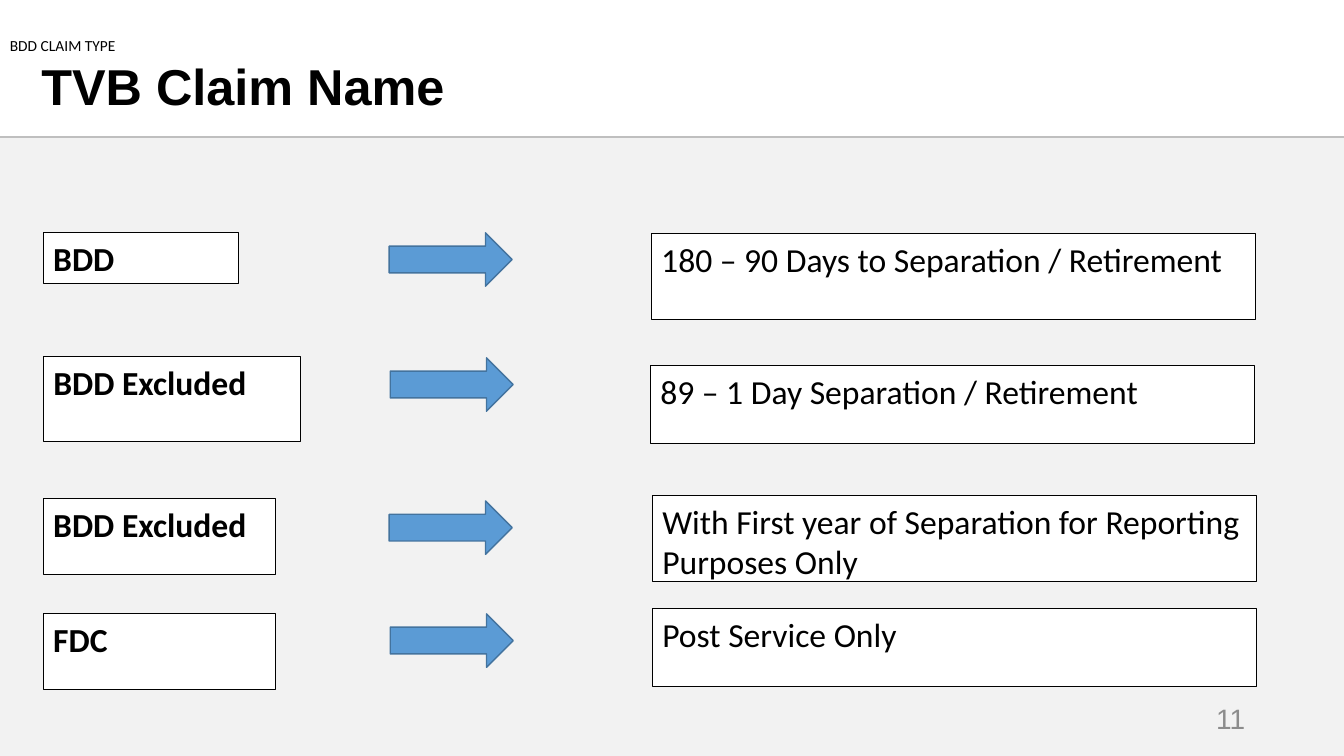
import dataclasses

import pptx
import pptx.dml.color
import pptx.enum.shapes
import pptx.enum.text
import pptx.util

Inches = pptx.util.Inches
Pt = pptx.util.Pt
Shape = pptx.enum.shapes.MSO_SHAPE
Anchor = pptx.enum.text.MSO_ANCHOR
Align = pptx.enum.text.PP_ALIGN

WIDTH, HEIGHT = 13.33, 7.5
HEAD = 1.36


@dataclasses.dataclass
class Box:
    left: float
    top: float
    width: float
    height: float

    def place(self) -> tuple:
        return tuple(Inches(v) for v in dataclasses.astuple(self))


@dataclasses.dataclass
class Claim:
    name: str
    label: Box
    arrow: tuple[float, float]
    term: str
    detail: Box


CLAIMS = [
    Claim("BDD", Box(0.43, 2.31, 1.94, 0.5), (3.86, 2.31),
          "180 – 90 Days to Separation / Retirement", Box(6.46, 2.32, 5.99, 0.85)),
    Claim("BDD Excluded", Box(0.43, 3.54, 2.55, 0.84), (3.87, 3.55),
          "89 – 1 Day Separation / Retirement", Box(6.45, 3.63, 5.99, 0.77)),
    Claim("BDD Excluded", Box(0.43, 4.95, 2.3, 0.75), (3.86, 4.97),
          "With First year of Separation for Reporting Purposes Only",
          Box(6.47, 4.92, 5.99, 0.85)),
    Claim("FDC", Box(0.43, 6.09, 2.3, 0.75), (3.87, 6.09),
          "Post Service Only", Box(6.47, 6.04, 5.99, 0.77)),
]


def paint(form, color: str) -> None:
    """Set a solid colour on a fill, or on the fill of a line."""
    form.solid()
    form.fore_color.rgb = pptx.dml.color.RGBColor.from_string(color)


def write(shape, text: str, size: float, face: str = "Calibri", color: str = "000000",
          bold: bool = False, align=Align.LEFT, anchor=Anchor.TOP) -> None:
    frame = shape.text_frame
    frame.word_wrap = True
    frame.vertical_anchor = anchor
    frame.text = text
    para = frame.paragraphs[0]
    para.alignment = align
    font = para.font
    font.name, font.size, font.bold = face, Pt(size), bold
    paint(font.fill, color)


def draw(slide, kind, box: Box, fill: str, line: str = "", weight: float = 0.75):
    shape = slide.shapes.add_shape(kind, *box.place())
    shape.shadow.inherit = False
    paint(shape.fill, fill)
    if line:
        paint(shape.line.fill, line)
        shape.line.width = Pt(weight)
    else:
        shape.line.fill.background()
    return shape


def rule(slide, top: float) -> None:
    """Draw the line under the header."""
    line = slide.shapes.add_connector(
        pptx.enum.shapes.MSO_CONNECTOR.STRAIGHT,
        Inches(0), Inches(top), Inches(WIDTH), Inches(top))
    paint(line.line.fill, "BFBFBF")
    line.line.width = Pt(1.5)
    props = line._element.spPr
    props.append(props.makeelement(pptx.oxml.ns.qn("a:effectLst"), {}))


def show(slide, claim: Claim) -> None:
    """Draw one row: claim name, arrow and time frame."""
    label = draw(slide, Shape.RECTANGLE, claim.label, "FFFFFF", "000000")
    write(label, claim.name, 24, bold=True)
    draw(slide, Shape.RIGHT_ARROW, Box(*claim.arrow, 1.22, 0.53), "5B9BD5", "43739E", 1)
    detail = draw(slide, Shape.RECTANGLE, claim.detail, "FFFFFF", "000000")
    write(detail, claim.term, 24)


def main() -> None:
    deck = pptx.Presentation()
    deck.slide_width, deck.slide_height = Inches(WIDTH), Inches(HEIGHT)
    slide = deck.slides.add_slide(deck.slide_layouts.get_by_name("Title Only"))
    paint(slide.background.fill, "FFFFFF")

    draw(slide, Shape.RECTANGLE, Box(0, HEAD, WIDTH, HEIGHT - HEAD), "F2F2F2")
    rule(slide, HEAD)

    title = slide.shapes.title
    title.left, title.top, title.width, title.height = Box(0.31, 0.31, 9.25, 1.14).place()
    write(title, "TVB Claim Name", 36, "Arial", bold=True, anchor=Anchor.MIDDLE)
    title.text_frame.paragraphs[0].line_spacing = 0.9

    kind = slide.shapes.add_textbox(*Box(0, 0.3, 2, 0.3).place())
    write(kind, "BDD CLAIM TYPE", 11, anchor=Anchor.MIDDLE)

    for claim in CLAIMS:
        show(slide, claim)

    number = slide.shapes.add_textbox(*Box(9.45, 6.93, 3, 0.4).place())
    write(number, "11", 20, "Arial", "8C8C8C", align=Align.RIGHT, anchor=Anchor.MIDDLE)

    deck.save("out.pptx")


if __name__ == "__main__":
    main()
